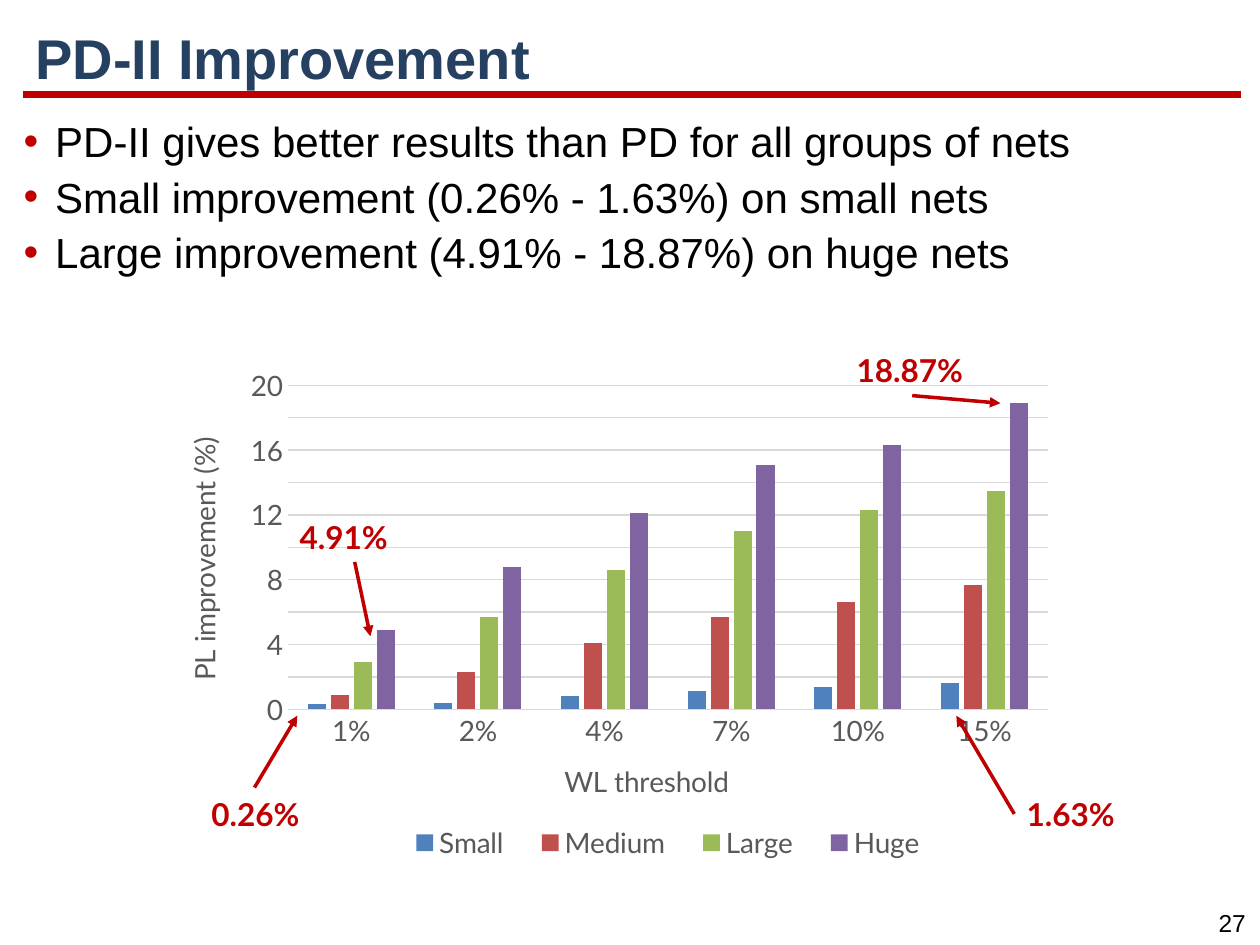
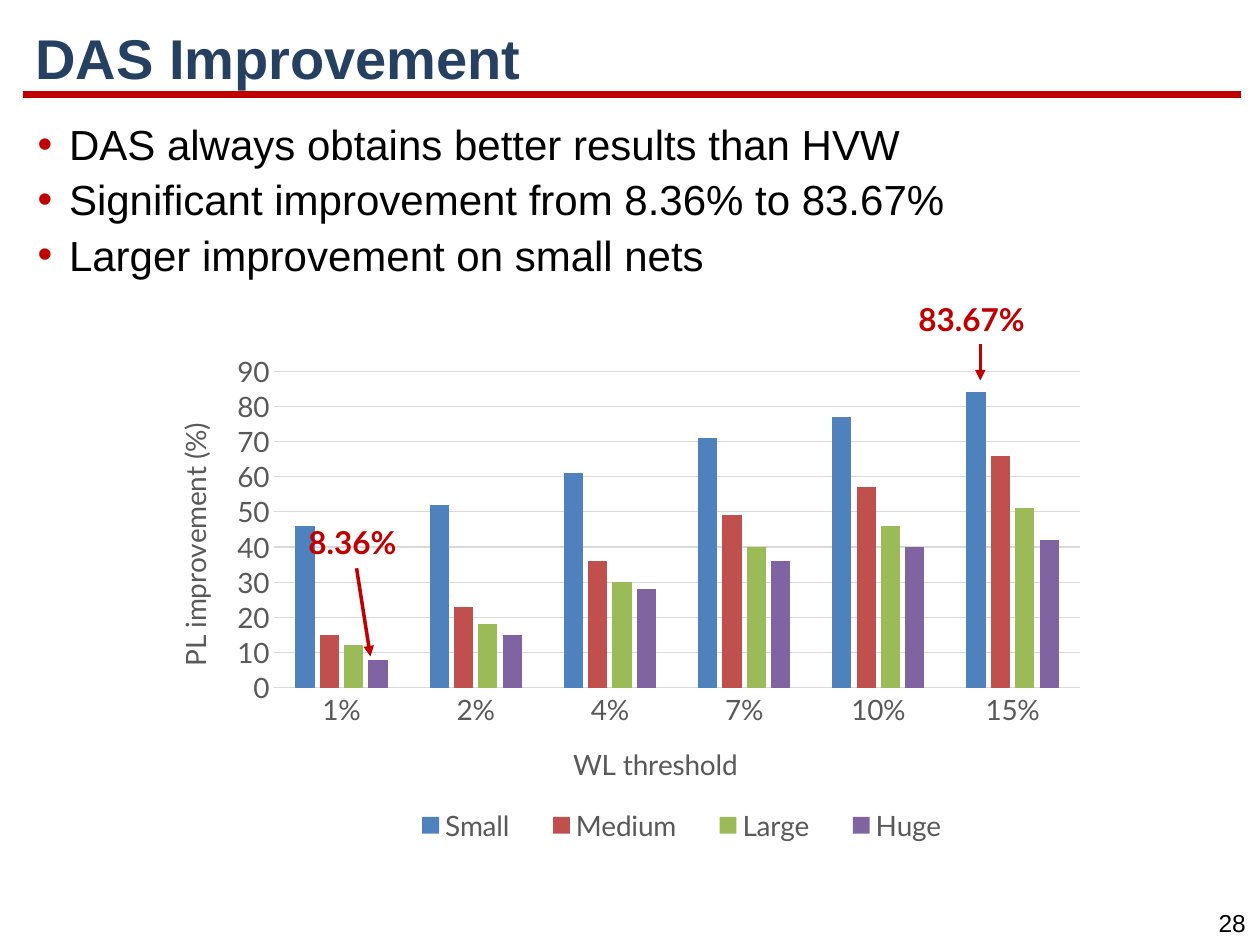
from dataclasses import dataclass

from lxml import etree
from pptx import Presentation
from pptx.chart.data import CategoryChartData
from pptx.dml.color import RGBColor
from pptx.enum.chart import XL_CHART_TYPE, XL_LEGEND_POSITION, XL_TICK_MARK
from pptx.enum.shapes import MSO_CONNECTOR
from pptx.enum.text import MSO_ANCHOR, MSO_AUTO_SIZE, PP_ALIGN
from pptx.oxml.ns import qn
from pptx.util import Inches, Pt

COLUMN = XL_CHART_TYPE.COLUMN_CLUSTERED
BOTTOM = XL_LEGEND_POSITION.BOTTOM
NO_TICK = XL_TICK_MARK.NONE
STRAIGHT = MSO_CONNECTOR.STRAIGHT
MIDDLE = MSO_ANCHOR.MIDDLE
NO_FIT = MSO_AUTO_SIZE.NONE
LEFT, CENTER = PP_ALIGN.LEFT, PP_ALIGN.CENTER

RED = RGBColor(0xC0, 0x00, 0x00)
NAVY = RGBColor(0x25, 0x40, 0x61)
BLACK = RGBColor(0x00, 0x00, 0x00)
GRAY = RGBColor(0x59, 0x59, 0x59)
PALE = RGBColor(0xD9, 0xD9, 0xD9)
GROUPS = {
    "Small": RGBColor(0x4F, 0x81, 0xBD),
    "Medium": RGBColor(0xC0, 0x50, 0x4D),
    "Large": RGBColor(0x9B, 0xBB, 0x59),
    "Huge": RGBColor(0x80, 0x64, 0xA2),
}
LIMITS = ("1%", "2%", "4%", "7%", "10%", "15%")
SANS, LATO = "Arial", "Lato"
TITLE_BOX = (0.18, 0.16, 9.68, 0.65)
PAGE_BOX = (9.56, 7.16, 0.44, 0.34)
KEY_BOX = (0.25, 0.88, 0.62, 0.09)  # legend as fractions of the chart


@dataclass(frozen=True)
class Callout:
    text: str
    box: tuple
    start: tuple
    end: tuple
    side: int | None = None  # side of the label that the arrow leaves from


@dataclass(frozen=True)
class Plot:
    box: tuple
    inner: tuple  # plot area as fractions of the chart
    top: int
    step: int
    values: tuple


@dataclass(frozen=True)
class Page:
    number: int
    title: str
    body: tuple
    points: tuple
    plot: Plot
    callouts: tuple


PAGES = (
    Page(
        27, "PD-II Improvement", (0.09, 0.93, 9.96, 5.88),
        ("PD-II gives better results than PD for all groups of nets",
         "Small improvement (0.26% - 1.63%) on small nets",
         "Large improvement (4.91% - 18.87%) on huge nets"),
        Plot((1.28, 2.85, 7.18, 4.15), (0.14, 0.05, 0.84, 0.62), 20, 2,
             ((0.3, 0.4, 0.8, 1.1, 1.4, 1.6),
              (0.9, 2.3, 4.1, 5.7, 6.6, 7.7),
              (2.9, 5.7, 8.6, 11, 12.3, 13.5),
              (4.9, 8.8, 12.1, 15.1, 16.3, 18.9))),
        (Callout("0.26%", (1.58, 6.26, 1.07, 0.4), (2.02, 6.25), (2.36, 5.68)),
         Callout("1.63%", (8.05, 6.26, 1.07, 0.4), (8.05, 6.46), (7.59, 5.68), 1),
         Callout("4.91%", (2.28, 4.06, 1.07, 0.4), (2.82, 4.46), (2.94, 5.05), 2),
         Callout("18.87%", (6.7, 2.74, 1.23, 0.4), (7.24, 3.14), (7.94, 3.2))),
    ),
    Page(
        28, "DAS Improvement", (0.2, 0.95, 9.66, 5.92),
        ("DAS always obtains better results than HVW",
         "Significant improvement from 8.36% to 83.67%",
         "Larger improvement on small nets"),
        Plot((1.2, 2.74, 7.52, 4.12), (0.13, 0.05, 0.85, 0.61), 90, 10,
             ((46, 52, 61, 71, 77, 84),
              (15, 23, 36, 49, 57, 66),
              (12, 18, 30, 40, 46, 51),
              (8, 15, 28, 36, 40, 42))),
        (Callout("8.36%", (2.35, 4.1, 1.07, 0.4), (2.83, 4.51), (2.94, 5.21)),
         Callout("83.67%", (7.19, 2.33, 1.18, 0.4), (7.78, 2.73), (7.78, 3.02), 2)),
    ),
)


def inches(lengths: tuple) -> list:
    return [Inches(length) for length in lengths]


def style(font, name: str, size: float, color: RGBColor, bold: bool = False) -> None:
    font.name, font.size, font.bold = name, Pt(size), bold
    font.color.rgb = color


def add_run(para, text: str, *look) -> None:
    run = para.add_run()
    run.text = text
    style(run.font, *look)


def add_line(shapes, start: tuple, end: tuple, width: float, arrow: bool = False):
    line = shapes.add_connector(STRAIGHT, *inches(start + end))
    line.line.color.rgb = RED
    line.line.width = Pt(width)
    props = line._element.spPr
    if arrow:
        etree.SubElement(props.find(qn("a:ln")), qn("a:tailEnd"), type="triangle")
    etree.SubElement(props, qn("a:effectLst"))
    return line


def add_frame(slide, page: Page) -> None:
    """Add the title, the red rule and the page number."""
    title = slide.shapes.title
    title.left, title.top, title.width, title.height = inches(TITLE_BOX)
    frame = title.text_frame
    frame.auto_size, frame.vertical_anchor = NO_FIT, MIDDLE
    para = frame.paragraphs[0]
    para.alignment, para.line_spacing = LEFT, 0.9
    add_run(para, page.title, SANS, 32, NAVY, True)

    add_line(slide.shapes, (0.18, 0.75), (9.85, 0.75), 4.5)

    frame = slide.shapes.add_textbox(*inches(PAGE_BOX)).text_frame
    frame.word_wrap = False
    para = frame.paragraphs[0]
    para.alignment = CENTER
    add_run(para, str(page.number), SANS, 14, BLACK)


def add_bullet(para) -> None:
    props = para._p.get_or_add_pPr()
    props.set("marL", str(Inches(0.25)))
    props.set("indent", str(Inches(-0.25)))
    color = etree.SubElement(props, qn("a:buClr"))
    etree.SubElement(color, qn("a:srgbClr"), val=str(RED))
    etree.SubElement(props, qn("a:buFont"), typeface=SANS)
    etree.SubElement(props, qn("a:buChar"), char="•")


def add_points(slide, page: Page) -> None:
    frame = slide.shapes.add_textbox(*inches(page.body)).text_frame
    frame.word_wrap = True
    for index, text in enumerate(page.points):
        para = frame.add_paragraph() if index else frame.paragraphs[0]
        add_bullet(para)
        para.line_spacing = 0.85
        if index:
            para.space_before = Pt(7.2)
        add_run(para, text, SANS, 24, BLACK)


def place(node, index: int, spots: tuple, inner: bool = False) -> None:
    """Fix left, top, width and height of a chart part, as fractions."""
    old = node.find(qn("c:layout"))
    if old is not None:
        node.remove(old)
    layout = etree.Element(qn("c:layout"))
    manual = etree.SubElement(layout, qn("c:manualLayout"))
    if inner:
        etree.SubElement(manual, qn("c:layoutTarget"), val="inner")
    for key in ("xMode", "yMode"):
        etree.SubElement(manual, qn(f"c:{key}"), val="edge")
    for key, value in zip("xywh", spots):
        etree.SubElement(manual, qn(f"c:{key}"), val=str(value))
    node.insert(index, layout)


def name_axis(axis, text: str, spot: tuple, turn: int) -> None:
    title = axis.axis_title
    frame = title.text_frame
    add_run(frame.paragraphs[0], text, LATO, 16, GRAY)
    body = frame._txBody.find(qn("a:bodyPr"))
    body.set("rot", str(turn * 60000))
    body.set("vert", "horz")
    place(title._element, 1, spot)


def add_plot(slide, plot: Plot) -> None:
    data = CategoryChartData()
    data.categories = LIMITS
    for name, values in zip(GROUPS, plot.values):
        data.add_series(name, values)
    chart = slide.shapes.add_chart(COLUMN, *inches(plot.box), data).chart
    style(chart.font, LATO, 16, BLACK)
    chart.has_title = False
    chart.has_legend = True
    chart.legend.position = BOTTOM
    chart.legend.include_in_layout = False
    style(chart.legend.font, LATO, 16, GRAY)
    place(chart.legend._element, 1, KEY_BOX)

    bars = chart.plots[0]
    bars.gap_width, bars.overlap, bars.vary_by_categories = 219, -27, False
    for series, color in zip(bars.series, GROUPS.values()):
        series.format.fill.solid()
        series.format.fill.fore_color.rgb = color

    across, up = chart.category_axis, chart.value_axis
    for axis in (across, up):
        axis.major_tick_mark = axis.minor_tick_mark = NO_TICK
        style(axis.tick_labels.font, LATO, 16, GRAY)
    up.minimum_scale, up.maximum_scale, up.major_unit = 0, plot.top, plot.step
    up.format.line.fill.background()
    for line in (across.format.line, up.major_gridlines.format.line):
        line.color.rgb, line.width = PALE, Pt(0.75)
    name_axis(across, "WL threshold", (0.44, 0.76), 0)
    name_axis(up, "PL improvement (%)", (0.02, 0.14), -90)
    place(chart._chartSpace.chart.plotArea, 0, plot.inner, inner=True)


def add_callout(slide, note: Callout) -> None:
    shapes = slide.shapes.add_group_shape().shapes
    label = shapes.add_textbox(*inches(note.box))
    label.text_frame.word_wrap = True
    add_run(label.text_frame.paragraphs[0], note.text, LATO, 18, RED, True)
    arrow = add_line(shapes, note.start, note.end, 2, arrow=True)
    if note.side is not None:
        arrow.begin_connect(label, note.side)


def main() -> None:
    deck = Presentation()
    deck.slide_width, deck.slide_height = Inches(10), Inches(7.5)
    for page in PAGES:
        slide = deck.slides.add_slide(deck.slide_layouts[5])
        add_frame(slide, page)
        add_points(slide, page)
        add_plot(slide, page.plot)
        for note in page.callouts:
            add_callout(slide, note)
    deck.save("out.pptx")


if __name__ == "__main__":
    main()
